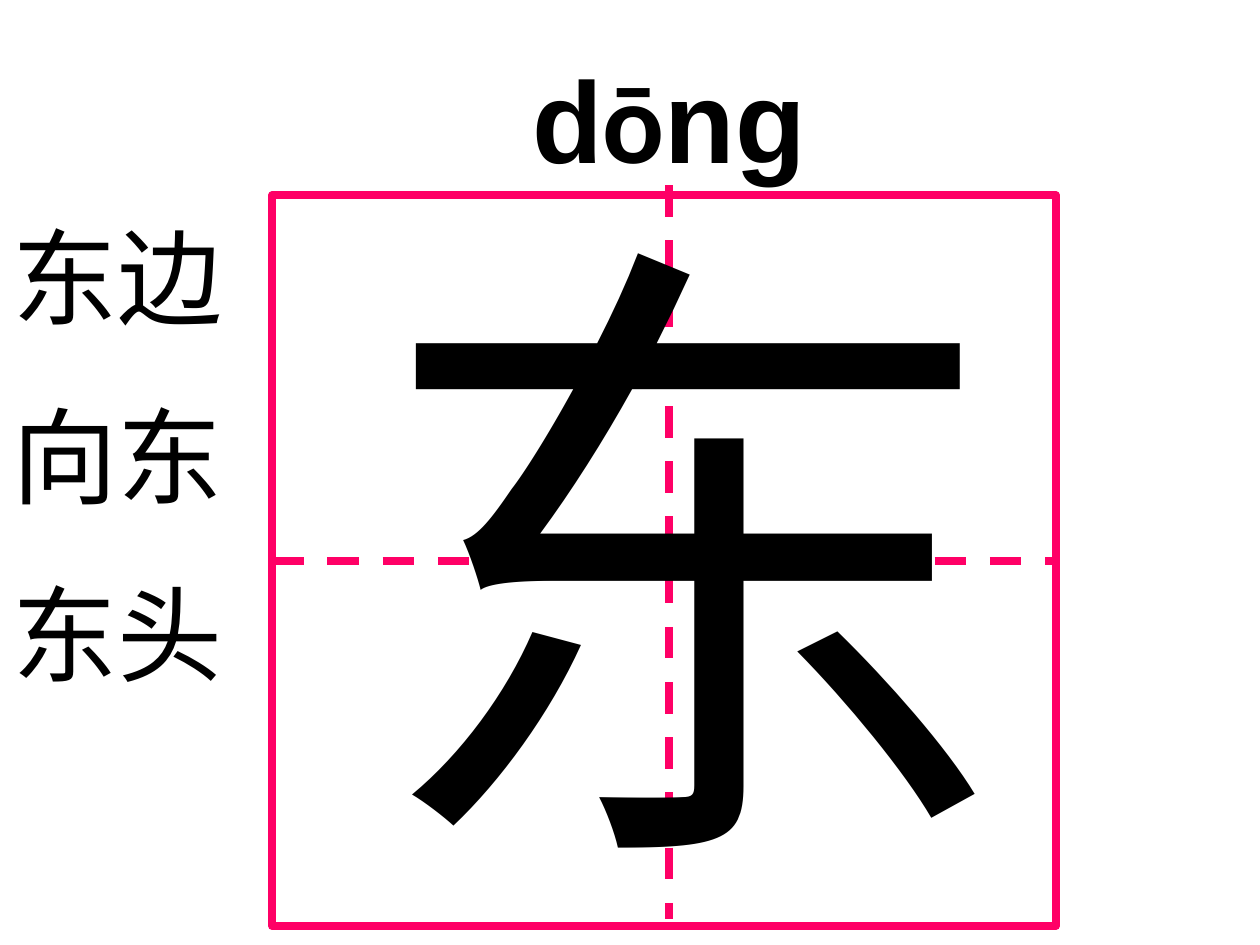
from lxml.etree import SubElement
from pptx import Presentation
from pptx.dml.color import RGBColor
from pptx.enum.dml import MSO_LINE
from pptx.enum.shapes import MSO_CONNECTOR, MSO_SHAPE
from pptx.enum.text import MSO_ANCHOR, MSO_AUTO_SIZE, PP_ALIGN
from pptx.oxml.ns import qn
from pptx.util import Inches, Pt

COLORS = {"ink": "000000", "frame": "FF0066"}
COLS, ROWS = 100, 75


class Card:
    """Style and current slide; lengths are in grid columns and rows."""

    def __init__(self, deck):
        self.slide = deck.slides.add_slide(deck.slide_layouts[1])
        self.shapes = self.slide.shapes
        self.col = deck.slide_width / COLS
        self.row = deck.slide_height / ROWS

    def spot(self, *grid):
        return [round(n * (self.row if i % 2 else self.col))
                for i, n in enumerate(grid)]

    def tint(self, name):
        return RGBColor.from_string(COLORS[name])

    def font(self, run, face, size, bold=False):
        run.font.name, run.font.size, run.font.bold = face, Pt(size), bold
        run.font.color.rgb = self.tint("ink")

    def place(self, holder, grid):
        holder.left, holder.top, holder.width, holder.height = self.spot(*grid)
        frame = holder.text_frame
        frame.auto_size = MSO_AUTO_SIZE.NONE
        frame.vertical_anchor = MSO_ANCHOR.TOP
        return frame

    def title(self, parts, grid, size):
        line = self.place(self.shapes.title, grid).paragraphs[0]
        line.alignment = PP_ALIGN.CENTER
        for text, face in parts:
            run = line.add_run()
            run.text = text
            self.font(run, face, size, True)

    def words(self, items, grid, face, size):
        frame = self.place(self.slide.placeholders[1], grid)
        frame.text = "\n".join(items)
        for line in frame.paragraphs:
            line.space_before = Pt(size / 2)
            props = line._p.get_or_add_pPr()
            props.set("marL", "0")
            props.set("indent", "0")
            SubElement(props, qn("a:buNone"))
            self.font(line.runs[0], face, size)

    def box(self, grid, color, width):
        box = self.shapes.add_shape(MSO_SHAPE.RECTANGLE, *self.spot(*grid))
        box.shadow.inherit = False
        box.fill.background()
        box.line.color.rgb = self.tint(color)
        box.line.width = Pt(width)
        return box

    def line(self, grid, color, width, dash=None):
        line = self.shapes.add_connector(MSO_CONNECTOR.STRAIGHT, *self.spot(*grid))
        line.line.color.rgb = self.tint(color)
        line.line.width = Pt(width)
        line.line.dash_style = dash
        SubElement(line._element.spPr, qn("a:effectLst"))
        return line

    def glyph(self, text, grid, face, size):
        frame = self.shapes.add_textbox(*self.spot(*grid)).text_frame
        frame.word_wrap = False
        frame.auto_size = MSO_AUTO_SIZE.SHAPE_TO_FIT_TEXT
        frame.text = text
        self.font(frame.paragraphs[0].runs[0], face, size)


def main():
    deck = Presentation()
    deck.slide_width, deck.slide_height = Inches(10), Inches(7.5)
    card = Card(deck)
    card.title([("d", "Arial"), ("ō", "Calibri"), ("ng", "Arial")],
               (35, 3.3, 36.2, 12.1), 66)
    card.words(["东边", "向东", "东头"], (0, 16.4, 20.5, 41),
               "Times New Roman", 60)

    frame = card.box((21.6, 15.5, 62.2, 58), "frame", 4.5)
    across = card.line((21.6, 44.6, 83.8, 44.6), "frame", 4.5, MSO_LINE.DASH)
    across.begin_connect(frame, 1)
    across.end_connect(frame, 3)
    card.line((53.1, 14.7, 53.1, 72.9), "frame", 4.5, MSO_LINE.DASH)
    card.glyph("东", (28.1, 11.7, 53.4, 62.7), "Times New Roman", 370)
    deck.save("out.pptx")


if __name__ == "__main__":
    main()
